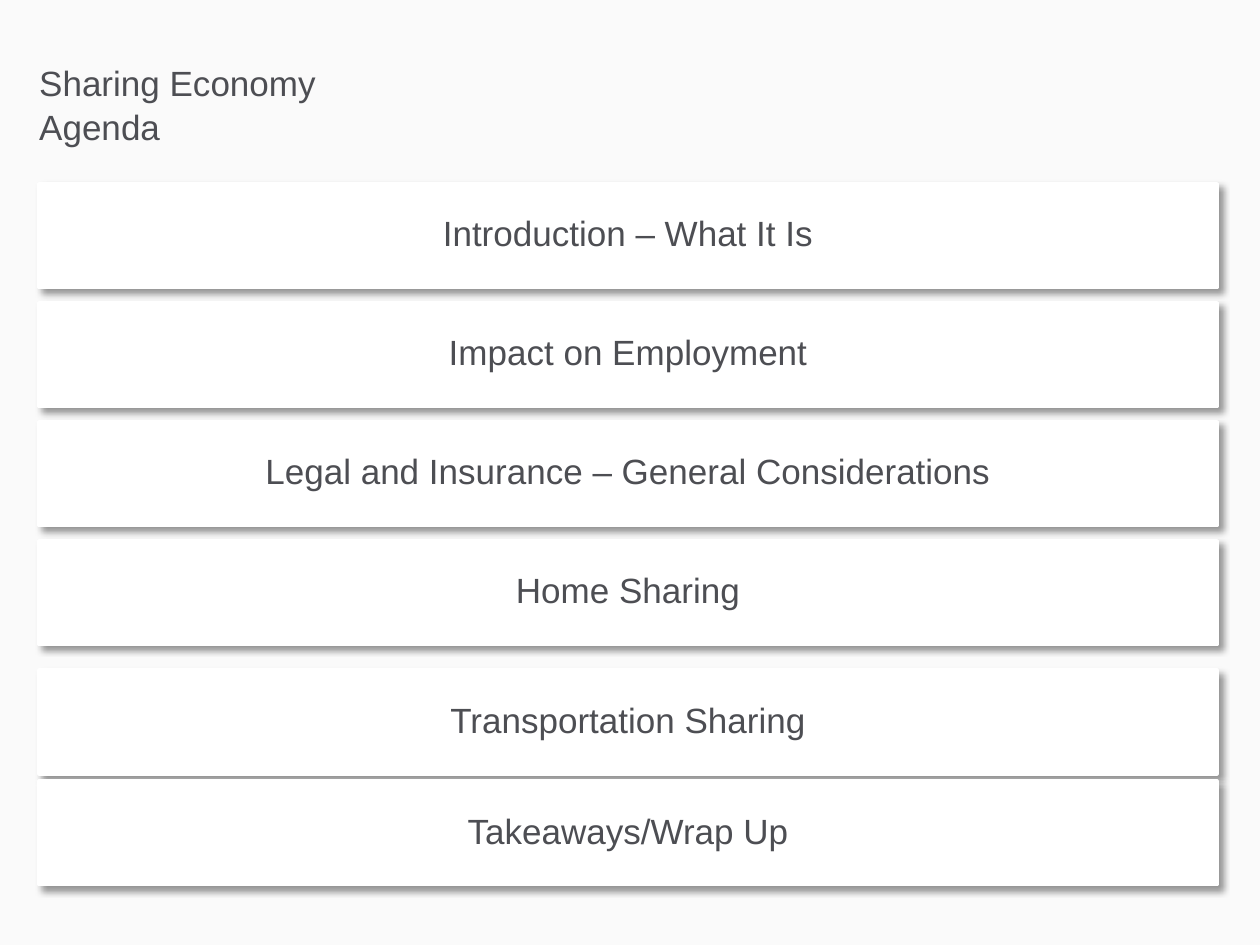
from typing import NamedTuple

from lxml.etree import SubElement
from pptx import Presentation
from pptx.dml.color import RGBColor
from pptx.enum.shapes import MSO_SHAPE as Shape
from pptx.enum.text import MSO_ANCHOR as Anchor, PP_ALIGN as Align
from pptx.oxml.ns import qn
from pptx.util import Pt

PAPER = RGBColor(0xFA, 0xFA, 0xFA)
WHITE = RGBColor(0xFF, 0xFF, 0xFF)
SLATE = RGBColor(0x4D, 0x4E, 0x53)

LEFT, WIDTH, HEIGHT = 22.4, 673, 59.3
TOP, PITCH = 105, 68
FONT = {"name": "Arial", "size": Pt(20), "bold": False}
SIDES = ("left", "top", "right", "bottom")


class Bar(NamedTuple):
    text: str
    top: float


MAIN = (
    "Introduction – What It Is",
    "Impact on Employment",
    "Legal and Insurance – General Considerations",
    "Home Sharing",
)
BARS = [Bar(text, TOP + i * PITCH) for i, text in enumerate(MAIN)] + [
    Bar("Transportation Sharing", 383),
    Bar("Takeaways/Wrap Up", 446.3),
]


def set_text(shape, text: str, inset: float, anchor, align, spacing: float) -> None:
    frame = shape.text_frame
    frame.text = text
    frame.word_wrap = True
    frame.vertical_anchor = anchor
    for side in SIDES:
        setattr(frame, f"margin_{side}", Pt(inset))
    par = frame.paragraphs[0]
    par.alignment = align
    par.line_spacing = spacing
    for run in par.runs:
        for key, value in FONT.items():
            setattr(run.font, key, value)
        run.font.color.rgb = SLATE


def add_shadow(shape) -> None:
    """Cast a soft black shadow to the lower right."""
    shape.shadow.inherit = False
    effects = shape._element.spPr.find(qn("a:effectLst"))
    outer = SubElement(effects, qn("a:outerShdw"), blurRad=str(Pt(4)),
                       dist=str(Pt(3)), dir=str(45 * 60000),
                       algn="tl", rotWithShape="0")
    black = SubElement(outer, qn("a:srgbClr"), val="000000")
    SubElement(black, qn("a:alpha"), val="40000")


def add_bar(slide, bar: Bar) -> None:
    box = slide.shapes.add_shape(Shape.RECTANGLE, Pt(LEFT), Pt(bar.top),
                                 Pt(WIDTH), Pt(HEIGHT))
    box.fill.solid()
    box.fill.fore_color.rgb = WHITE
    box.line.color.rgb = WHITE
    box.line.width = Pt(2)
    add_shadow(box)
    set_text(box, bar.text, 6, Anchor.MIDDLE, Align.CENTER, 0.9)


def main() -> None:
    deck = Presentation()
    deck.slide_width, deck.slide_height = Pt(720), Pt(540)
    slide = deck.slides.add_slide(deck.slide_layouts[5])
    slide.background.fill.solid()
    slide.background.fill.fore_color.rgb = PAPER

    title = slide.shapes.title
    title.left, title.top = Pt(LEFT), Pt(34)
    title.width, title.height = Pt(538.6), Pt(57)
    set_text(title, "Sharing Economy\vAgenda", 0, Anchor.TOP, Align.LEFT, 1.05)

    for bar in BARS:
        add_bar(slide, bar)
    deck.save("out.pptx")


if __name__ == "__main__":
    main()
